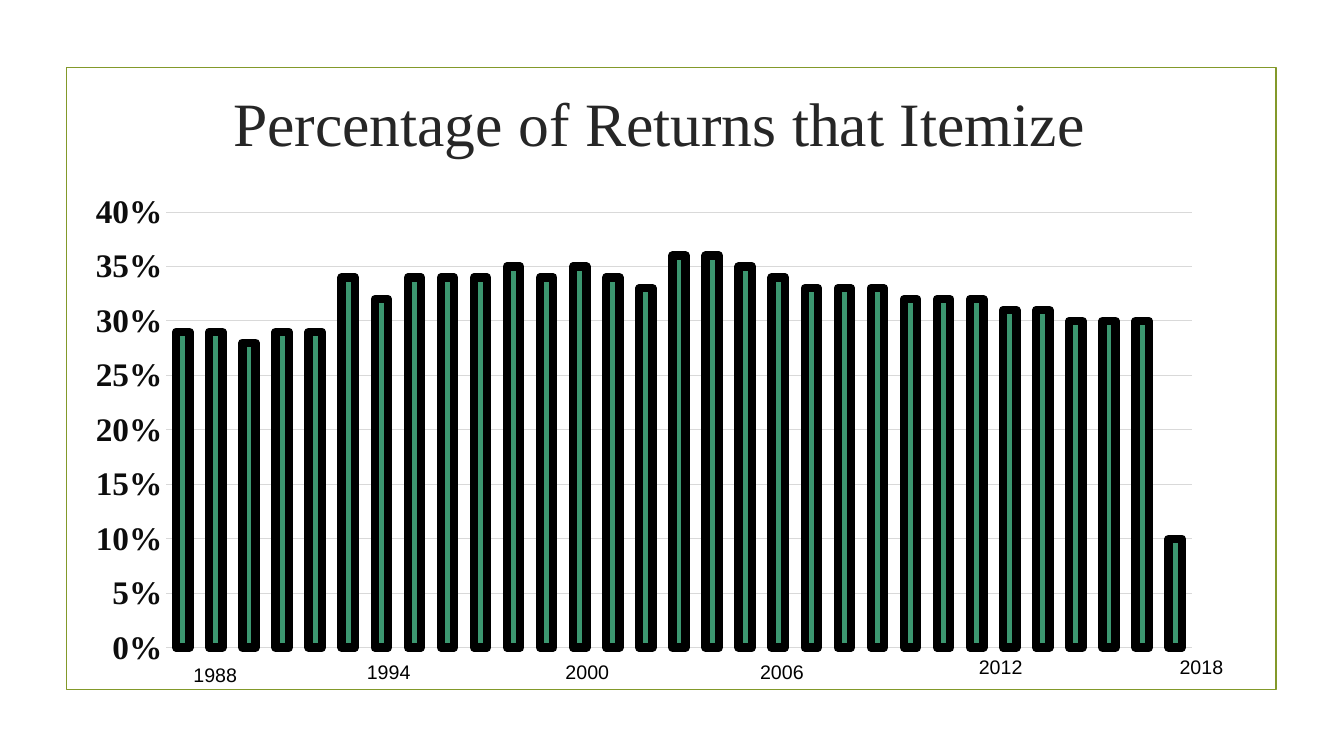
from lxml import etree
from pptx import Presentation
from pptx.chart.data import CategoryChartData
from pptx.dml.color import RGBColor
from pptx.enum.chart import XL_CHART_TYPE as ChartType, XL_TICK_MARK as TickMark
from pptx.enum.shapes import MSO_SHAPE as Shape
from pptx.enum.text import MSO_ANCHOR as Anchor, PP_ALIGN as Align
from pptx.oxml.ns import qn
from pptx.util import Inches, Pt


def color(hex_string):
    return RGBColor.from_string(hex_string)


def add_text(text, left, top, width, height, size, font_name, hex_string):
    box = slide.shapes.add_textbox(Inches(left), Inches(top), Inches(width), Inches(height))
    text_frame = box.text_frame
    text_frame.word_wrap = True
    text_frame.vertical_anchor = Anchor.MIDDLE
    text_frame.text = text
    paragraph = text_frame.paragraphs[0]
    paragraph.alignment = Align.CENTER
    font = paragraph.runs[0].font
    font.size, font.name = Pt(size), font_name
    font.color.rgb = color(hex_string)


presentation = Presentation()
presentation.slide_width = Inches(13.33)
presentation.slide_height = Inches(7.5)
slide = presentation.slides.add_slide(presentation.slide_layouts[6])

# Frame
frame = slide.shapes.add_shape(Shape.RECTANGLE, Inches(0.66), Inches(0.67), Inches(12), Inches(6.17))
frame.shadow.inherit = False
frame.fill.background()
frame.line.color.rgb = color("83992A")
frame.line.width = Pt(1.25)

# Title
add_text("Percentage of Returns that Itemize", 1.29, 0.49, 10.5, 1.43, 44, "Times New Roman", "262626")

# Column chart of itemizing share, one column per year
percentages = [29, 29, 28, 29, 29, 34, 32, 34, 34, 34, 35, 34, 35, 34, 33, 36,
               36, 35, 34, 33, 33, 33, 32, 32, 32, 31, 31, 30, 30, 30, 10]
chart_data = CategoryChartData(number_format="0%")
chart_data.categories = [str(number) for number in range(1, len(percentages) + 1)]
chart_data.add_series("Series 1", [percentage / 100 for percentage in percentages])
chart = slide.shapes.add_chart(ChartType.COLUMN_CLUSTERED, Inches(0.95), Inches(1.92),
                               Inches(11.09), Inches(4.69), chart_data).chart
chart.has_legend = False
chart.has_title = False
chart.font.size, chart.font.name = Pt(24), "Times New Roman"
chart.font.color.rgb = color("000000")

plot = chart.plots[0]
plot.gap_width = 150
plot.vary_by_categories = False
series_format = plot.series[0].format
series_format.fill.solid()
series_format.fill.fore_color.rgb = color("3C9770")
series_format.line.color.rgb = color("000000")
series_format.line.width = Pt(6)

# Axes
chart.category_axis.visible = False
value_axis = chart.value_axis
value_axis.minimum_scale, value_axis.maximum_scale = 0, 0.4
value_axis.major_unit = 0.05
value_axis.major_tick_mark = value_axis.minor_tick_mark = TickMark.NONE
value_axis.format.line.fill.background()
value_axis.major_gridlines.format.line.color.rgb = color("D9D9D9")
value_axis.major_gridlines.format.line.width = Pt(0.75)
labels = value_axis.tick_labels
labels.number_format, labels.number_format_is_linked = "0%", False
labels.font.size, labels.font.name, labels.font.bold = Pt(24), "Times New Roman", True
labels.font.color.rgb = color("0D0D0D")

# Fixed inner plot area
plot_area = plot._element.getparent()
for old_layout in plot_area.findall(qn("c:layout")):
    plot_area.remove(old_layout)
layout = etree.Element(qn("c:layout"))
manual_layout = etree.SubElement(layout, qn("c:manualLayout"))
for tag, value in [("layoutTarget", "inner"), ("xMode", "edge"), ("yMode", "edge"),
                   ("x", "0.054"), ("y", "0.03"), ("w", "0.926"), ("h", "0.94")]:
    etree.SubElement(manual_layout, qn("c:" + tag)).set("val", value)
plot_area.insert(0, layout)

# Year labels under the columns
for year, left, top in [(1988, 1.76, 6.52), (1994, 3.48, 6.49), (2000, 5.45, 6.49),
                        (2006, 7.38, 6.49), (2012, 9.55, 6.44), (2018, 11.54, 6.44)]:
    add_text(str(year), left, top, 0.75, 0.34, 14, "Arial", "000000")

presentation.save("out.pptx")
